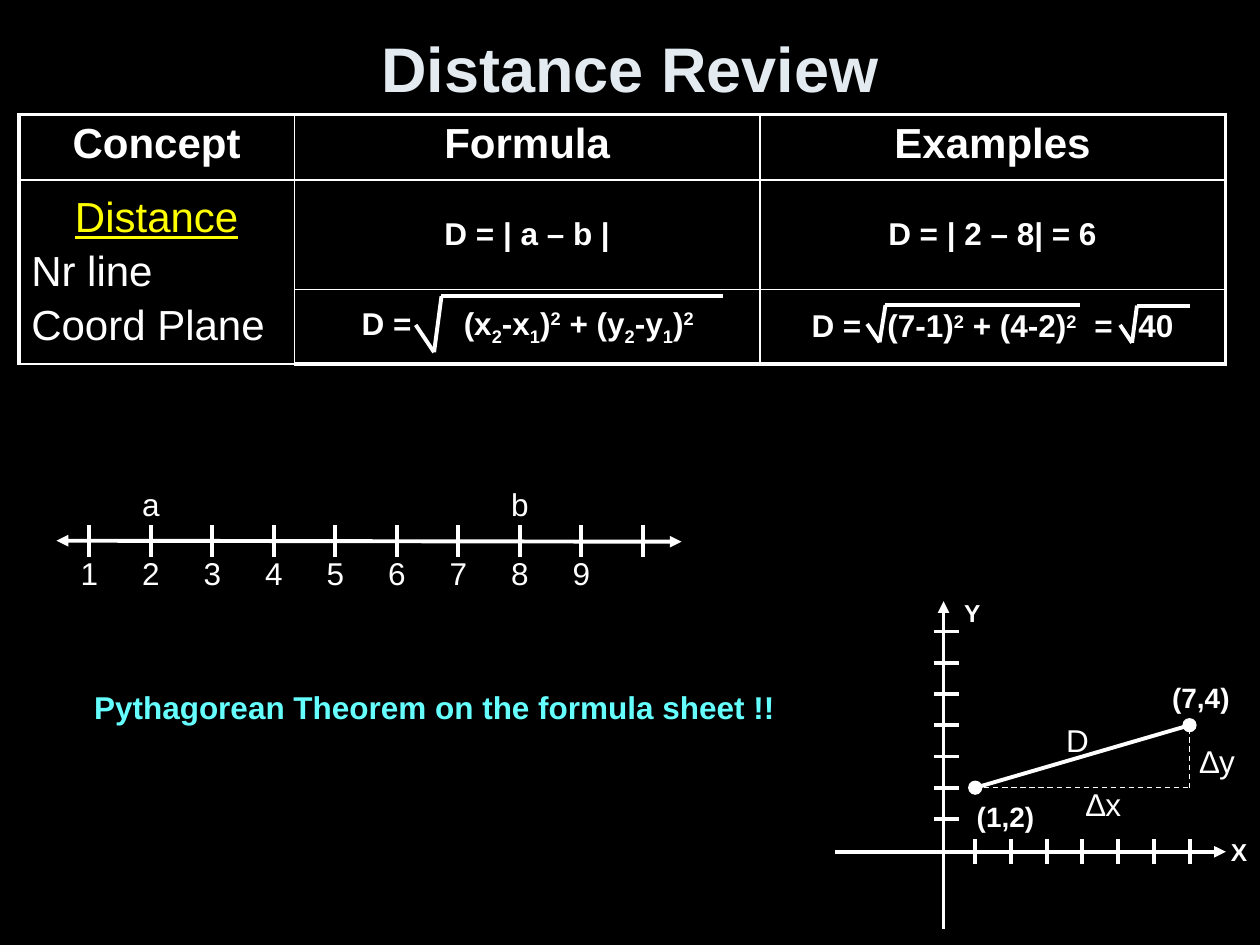
from dataclasses import dataclass
from lxml.etree import SubElement as Sub
from pptx import Presentation
from pptx.dml.color import RGBColor as Rgb
from pptx.enum.dml import MSO_LINE as Dash
from pptx.enum.shapes import MSO_CONNECTOR as Conn, MSO_SHAPE as Shape
from pptx.enum.text import MSO_ANCHOR as Anchor, PP_ALIGN as Align
from pptx.oxml.ns import qn
from pptx.util import Cm, Pt


@dataclass(frozen=True)
class Theme:
    """Colours, font, type sizes and line widths of the slide."""
    back: str = "000000"
    ink: str = "FFFFFF"
    title: str = "E3EBF1"
    topic: str = "FFFF00"
    note: str = "66FFFF"
    font: str = "Arial"
    huge: int = 36
    head: int = 24
    body: int = 18
    point: int = 16
    axis: int = 14
    thick: float = 2.25
    thin: float = 1
    hair: float = 0.75


T = Theme()
UP, DOWN = {"base": 30}, {"base": -25}
BOLD = {"size": T.body, "bold": True}
HEAD = {"size": T.head, "bold": True}
PLAIN = {"size": T.head}
TOPIC = {"size": T.head, "color": T.topic, "line": True}

COLS, ROWS = (5.56, 9.38, 9.38), (1.32, 2.21, 1.5)
LEFT, TOP = 0.38, 2.31
CELLS = {
    (0, 0): [("c", HEAD, [("Concept", {})])],
    (0, 1): [("c", HEAD, [("Formula", {})])],
    (0, 2): [("c", HEAD, [("Examples", {})])],
    (1, 0): [("c", TOPIC, [("Distance", {})]),
             ("l", PLAIN, [("Nr line", {})]),
             ("l", PLAIN, [("Coord Plane", {})])],
    (1, 1): [("c", BOLD, [("D = | a – b |", {})])],
    (1, 2): [("c", BOLD, [("D = | 2 – 8| = 6", {})])],
    (2, 1): [("l", BOLD, [
        ("D =\t(x", {}), ("2", DOWN), ("-x", {}), ("1", DOWN), (")", {}), ("2", UP),
        (" + (y", {}), ("2", DOWN), ("-y", {}), ("1", DOWN), (")", {}), ("2", UP)])],
    (2, 2): [("l", BOLD, [
        ("D =\t(7-1)", {}), ("2", UP), (" + (4-2)", {}), ("2", UP), ("\t=\t40", {})])],
}
TABS = {(2, 1): (1.35, [2.06]), (2, 2): (1.04, [1.53, 5.7, 6.59])}
ROOTS = [
    [(8.38, 6.55), (8.75, 7.1), (8.9, 5.97), (14.58, 5.97)],
    [(17.48, 6.53), (17.73, 6.9), (17.85, 6.15), (21.77, 6.15)],
    [(22.58, 6.55), (22.82, 6.91), (22.92, 6.16), (23.98, 6.16)],
]
MARKS = [("a", 2), ("b", 8)]
START, END = (1, 2), (7, 4)
LABELS = [
    ("(1,2)", 20.27, 16.45, 1.68, T.point, True),
    ("(7,4)", 24.21, 14.06, 1.68, T.point, True),
    ("Y", 19.6, 12.36, 0.84, T.axis, True),
    ("X", 24.98, 17.16, 0.84, T.axis, True),
    ("∆x", 22.25, 16.21, 1.22, T.body, False),
    ("∆y", 24.54, 15.34, 1.22, T.body, False),
    ("D", 21.72, 14.91, 0.97, T.body, False),
]


def write(para, text, size=T.body, color=T.ink, bold=False, line=False, base=0):
    run = para.add_run()
    run.text = text
    font = run.font
    font.name, font.size, font.bold, font.underline = T.font, Pt(size), bold, line
    font.color.rgb = Rgb.from_string(color)
    if base:
        run._r.get_or_add_rPr().set("baseline", str(base * 1000))


def label(shapes, text, x, y, wide, size=T.body, bold=False, color=T.ink):
    high = size * 0.04 + 0.3
    box = shapes.add_textbox(Cm(x - wide / 2), Cm(y - high / 2), Cm(wide), Cm(high))
    frame = box.text_frame
    frame.word_wrap = False
    frame.vertical_anchor = Anchor.MIDDLE
    para = frame.paragraphs[0]
    para.alignment = Align.CENTER
    write(para, text, size, color, bold)


def stroke(shapes, start, end, width=T.thick, dash=False, ends=()):
    link = shapes.add_connector(Conn.STRAIGHT, *map(Cm, (*start, *end)))
    link.line.width = Pt(width)
    link.line.color.rgb = Rgb.from_string(T.ink)
    if dash:
        link.line.dash_style = Dash.DASH
    for end in ends:
        Sub(link.line._get_or_add_ln(), qn(f"a:{end}"), type="triangle")
    Sub(link._element.spPr, qn("a:effectLst"))


def border(cell, row, col):
    props = cell._tc.get_or_add_tcPr()
    outer = {"L": col == 0, "R": col == len(COLS) - 1,
             "T": row == 0, "B": row == len(ROWS) - 1}
    for side, edge in outer.items():
        width = Pt(T.thick if edge else T.thin)
        line = Sub(props, qn(f"a:ln{side}"), w=str(int(width)))
        Sub(Sub(line, qn("a:solidFill")), qn("a:srgbClr"), val=T.ink)


def fill(cell, row, col):
    cell.vertical_anchor = Anchor.MIDDLE if row else Anchor.TOP
    inset, stops = TABS.get((row, col), (0.25, []))
    cell.margin_left = Cm(inset)
    frame = cell.text_frame
    for num, (side, style, runs) in enumerate(CELLS.get((row, col), [])):
        para = frame.add_paragraph() if num else frame.paragraphs[0]
        para.alignment = Align.CENTER if side == "c" else Align.LEFT
        if num:
            para.space_before = Pt(4)
        if stops:
            tabs = Sub(para._p.get_or_add_pPr(), qn("a:tabLst"))
            for stop in stops:
                Sub(tabs, qn("a:tab"), pos=str(int(Cm(stop))), algn="l")
        for text, extra in runs:
            write(para, text, **style, **extra)


def grid(shapes):
    size = map(Cm, (LEFT, TOP, sum(COLS), sum(ROWS)))
    table = shapes.add_table(len(ROWS), len(COLS), *size).table
    table.first_row = table.horz_banding = False
    for col, wide in zip(table.columns, COLS):
        col.width = Cm(wide)
    for row, high in zip(table.rows, ROWS):
        row.height = Cm(high)
    table.cell(1, 0).merge(table.cell(2, 0))
    for row in range(len(ROWS)):
        for col in range(len(COLS)):
            cell = table.cell(row, col)
            border(cell, row, col)
            cell.fill.background()
            fill(cell, row, col)


def ruler(shapes):
    def spot(num):
        return 1.8 + 1.24 * (num - 1)

    stroke(shapes, (1.14, 10.9), (13.74, 10.92), ends=("headEnd", "tailEnd"))
    for num in range(1, 11):
        stroke(shapes, (spot(num), 10.59), (spot(num), 11.23))
    for num in range(1, 10):
        label(shapes, str(num), spot(num), 11.56, 0.86)
    for name, num in MARKS:
        label(shapes, name, spot(num), 10.15, 0.86)


def plane(shapes):
    def spot(x, y):
        return 19.66 + 0.72 * (x - 1), 16.51 - 0.63 * (y - 1)

    stroke(shapes, (19.02, 12.12), (19.02, 18.72), ends=["headEnd"])
    stroke(shapes, (16.84, 17.17), (24.71, 17.17), ends=["tailEnd"])
    for num in range(1, 8):
        x, y = spot(num, num)
        stroke(shapes, (x, 16.92), (x, 17.42))
        stroke(shapes, (18.82, y), (19.33, y))
    first, last, turn = spot(*START), spot(*END), spot(END[0], START[1])
    for x, y in (first, last):
        dot = shapes.add_shape(Shape.OVAL, Cm(x - 0.13), Cm(y - 0.13), Cm(0.26), Cm(0.26))
        dot.shadow.inherit = False
        dot.fill.solid()
        dot.fill.fore_color.rgb = dot.line.color.rgb = Rgb.from_string(T.ink)
        dot.line.width = Pt(T.hair)
    stroke(shapes, first, last)
    stroke(shapes, first, turn, T.hair, dash=True)
    stroke(shapes, turn, last, T.hair, dash=True)
    for item in LABELS:
        label(shapes, *item)


def main():
    deck = Presentation()
    deck.slide_width, deck.slide_height = Cm(25.4), Cm(19.05)
    slide = deck.slides.add_slide(deck.slide_layouts[6])
    slide.background.fill.solid()
    slide.background.fill.fore_color.rgb = Rgb.from_string(T.back)
    shapes = slide.shapes
    label(shapes, "Distance Review", 12.7, 1.35, 22.86, T.huge, True, T.title)
    grid(shapes)
    for root in ROOTS:
        group = shapes.add_group_shape().shapes
        for start, end in zip(root, root[1:]):
            stroke(group, start, end)
    ruler(shapes.add_group_shape().shapes)
    plane(shapes.add_group_shape().shapes)
    label(shapes, "Pythagorean Theorem on the formula sheet !!",
          8.76, 14.25, 14.38, T.body, True, T.note)
    deck.save("out.pptx")


if __name__ == "__main__":
    main()
